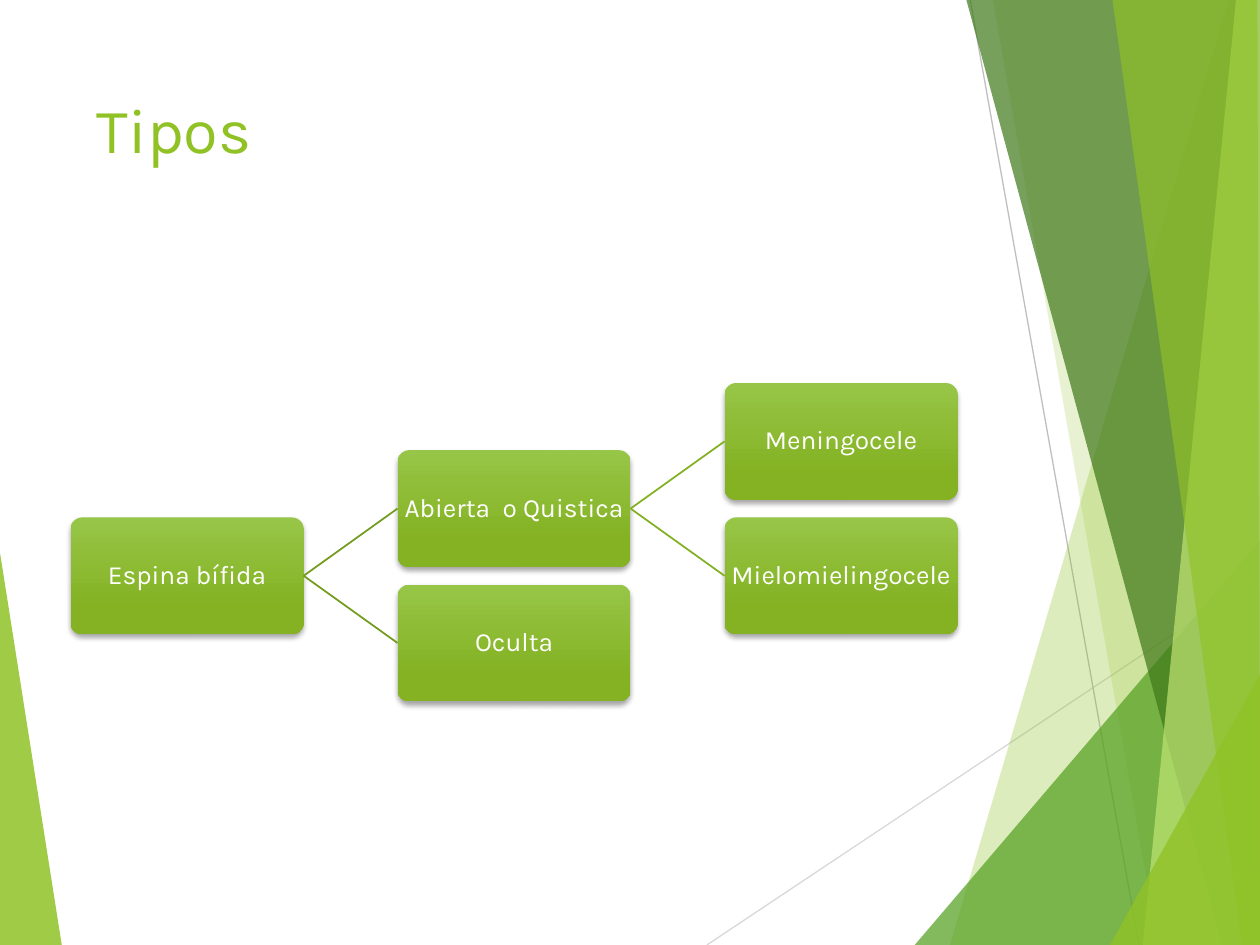
"""Build the slide "Tipos": a tree of boxes beside a fan of green bands."""
from lxml.etree import SubElement
from pptx import Presentation
from pptx.dml.color import RGBColor
from pptx.enum.shapes import MSO_CONNECTOR, MSO_SHAPE
from pptx.enum.text import MSO_ANCHOR, PP_ALIGN
from pptx.oxml.ns import qn
from pptx.util import Inches, Pt

LIME = RGBColor(0x90, 0xC2, 0x26)
LEAF = RGBColor(0x54, 0xA0, 0x21)
PINE = RGBColor(0x3F, 0x78, 0x19)
PALE = RGBColor(0xC0, 0xE4, 0x74)
WHITE = RGBColor(0xFF, 0xFF, 0xFF)
SILVER = RGBColor(0xD9, 0xD9, 0xD9)
GREY = RGBColor(0xBF, 0xBF, 0xBF)
TOP = RGBColor(0x97, 0xC5, 0x47)
BASE = RGBColor(0x84, 0xB2, 0x23)
MOSS = RGBColor(0x73, 0x9B, 0x1E)
GRASS = RGBColor(0x83, 0xB0, 0x22)
FONT = "Karla"

deck = Presentation()
deck.slide_width, deck.slide_height = Inches(10), Inches(7.5)
slide = deck.slides.add_slide(deck.slide_layouts[6])
shapes = slide.shapes


def place(*shares):
    """Turn x, y pairs in percent of the slide into lengths."""
    sides = (deck.slide_width, deck.slide_height) * (len(shares) // 2)
    return [round(side * share / 100) for side, share in zip(sides, shares)]


def draw_line(ends, color, width):
    """Draw a straight line without shadow."""
    line = shapes.add_connector(MSO_CONNECTOR.STRAIGHT, *place(*ends))
    line.line.color.rgb = color
    line.line.width = Pt(width)
    SubElement(line._element.spPr, qn("a:effectLst"))
    return line


bands = [
    (LIME, 85, [(0, 58.5), (4.9, 100), (0, 100)]),
    (LIME, 30, [(97.5, 0), (75.4, 100), (100, 100), (100, 0)]),
    (LIME, 20, [(78.8, 0), (91.9, 100), (100, 100), (100, 0)]),
    (LEAF, 72, [(72.6, 100), (100, 57.2), (100, 100)]),
    (PINE, 70, [(76.7, 0), (97, 100), (100, 100), (100, 0)]),
    (PALE, 70, [(98.1, 0), (90.7, 100), (100, 100), (100, 0)]),
    (LIME, 65, [(88.3, 0), (98.6, 100), (100, 100), (99.8, 0)]),
    (LIME, 80, [(88.1, 100), (100, 71.4), (100, 100)]),
]
for order, (color, alpha, points) in enumerate(bands):
    if order == 1:
        draw_line((56.1, 100, 100, 61), SILVER, 0.75)
        draw_line((77, 0, 90.4, 100), GREY, 0.75)
    first, *rest = [place(*point) for point in points]
    pen = shapes.build_freeform(*first, scale=1)
    pen.add_line_segments(rest, close=True)
    band = pen.convert_to_shape()
    band.shadow.inherit = False
    band.fill.solid()
    band.fill.fore_color.rgb = color
    band.line.fill.background()
    tint = band._element.spPr.find(qn("a:solidFill"))[0]
    SubElement(tint, qn("a:alpha"), val=str(alpha * 1000))

title = shapes.add_textbox(*place(6.7, 8.93, 69.4, 19.2)).text_frame
title.word_wrap = True
run = title.paragraphs[0].add_run()
run.text = "Tipos"
run.font.name, run.font.size = FONT, Pt(36)
run.font.color.rgb = LIME

LEFT, HEAD, COL, ROW = 5.6, 40.53, 25.95, 7.11
nodes = [
    ("Espina bífida", 0, 2),
    ("Abierta  o Quistica", 1, 1),
    ("Meningocele", 2, 0),
    ("Mielomielingocele", 2, 2),
    ("Oculta", 1, 3),
]
boxes = {}
for name, col, row in nodes:
    spot = place(LEFT + col * COL, HEAD + row * ROW, 18.5, 12.36)
    box = boxes[name] = shapes.add_shape(MSO_SHAPE.ROUNDED_RECTANGLE, *spot)
    box.adjustments[0] = 0.1
    box.fill.gradient()
    box.fill.gradient_angle = 270
    for stop, color, point in zip(box.fill.gradient_stops, (TOP, BASE), (0, 0.78)):
        stop.color.rgb, stop.position = color, point
    box.line.fill.background()
    box.shadow.inherit = False
    glow = SubElement(box._element.spPr.find(qn("a:effectLst")), qn("a:outerShdw"),
                      blurRad=str(Pt(3)), dist=str(Pt(2)), dir="5400000", rotWithShape="0")
    shade = SubElement(glow, qn("a:srgbClr"), val="000000")
    SubElement(shade, qn("a:alpha"), val="35000")
    frame = box.text_frame
    frame.word_wrap = True
    frame.vertical_anchor = MSO_ANCHOR.MIDDLE
    frame.margin_left = frame.margin_right = Inches(0.01)
    frame.margin_top = frame.margin_bottom = Inches(0.01)
    para = frame.paragraphs[0]
    para.alignment, para.line_spacing = PP_ALIGN.CENTER, 0.9
    run = para.add_run()
    run.text = name
    run.font.name, run.font.size = FONT, Pt(15)
    run.font.color.rgb = WHITE

links = [
    (0, 1, MOSS),
    (1, 2, GRASS),
    (1, 3, GRASS),
    (0, 4, MOSS),
]
for start, end, color in links:
    link = draw_line((0, 0, 0, 0), color, 1)
    link.begin_connect(boxes[nodes[start][0]], 3)
    link.end_connect(boxes[nodes[end][0]], 1)

deck.save("out.pptx")
